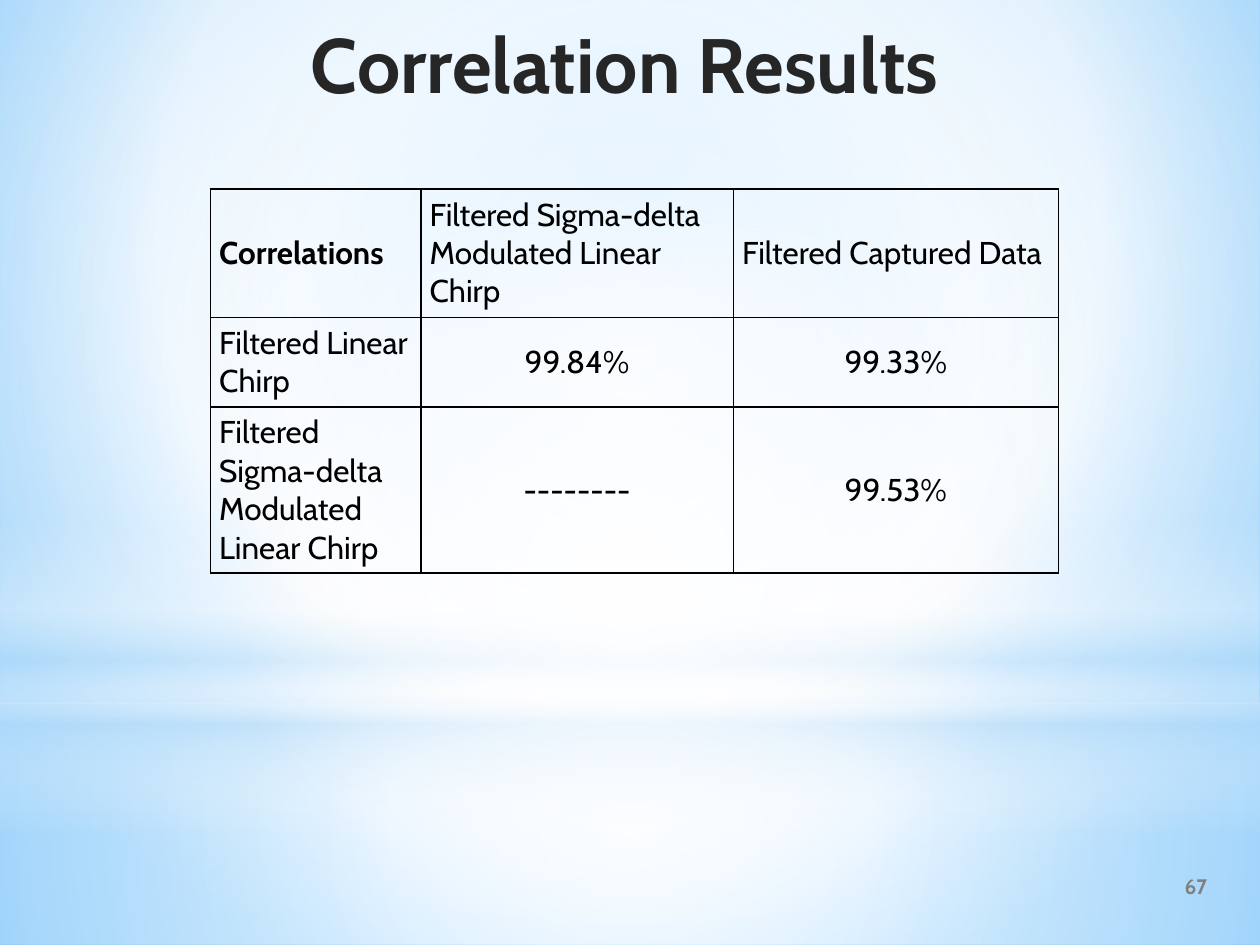
from lxml.etree import SubElement
from pptx import Presentation
from pptx.dml.color import RGBColor
from pptx.enum.shapes import MSO_SHAPE
from pptx.enum.text import MSO_ANCHOR, PP_ALIGN
from pptx.oxml.ns import qn
from pptx.util import Inches, Pt

FONT = "Cabin"
BLACK = RGBColor(0x00, 0x00, 0x00)
CHARCOAL = RGBColor(0x26, 0x26, 0x26)
GRAY = RGBColor(0x80, 0x80, 0x80)
WHITE = RGBColor(0xFF, 0xFF, 0xFF)
PALE_BLUE = RGBColor(0xB4, 0xDC, 0xFA)
SKY_BLUE = RGBColor(0x9E, 0xD5, 0xFF)
DEEP_BLUE = RGBColor(0x5B, 0xB9, 0xFF)

CENTER = (50, 50, 50, 50)
# Backdrop layers: preset, (left, top, width, height),
# stops of (position %, colour, opacity %), focus of a radial gradient or None
LAYERS = [
    (MSO_SHAPE.RECTANGLE, (0, 5.58, 10, 1.92),
     [(0, WHITE, 91), (37, WHITE, 76), (100, PALE_BLUE, 79)], CENTER),
    (MSO_SHAPE.RECTANGLE, (0, 0, 10, 5.58),
     [(0, WHITE, 89), (48, WHITE, 62), (100, PALE_BLUE, 79)], CENTER),
    (MSO_SHAPE.RECTANGLE, (0, 4.12, 10, 2.5),
     [(0, WHITE, 0), (29, WHITE, 30), (45, PALE_BLUE, 40),
      (55, WHITE, 26), (65, PALE_BLUE, 60), (100, WHITE, 0)], None),
    (MSO_SHAPE.OVAL, (0, 1.75, 10, 5.58),
     [(0, WHITE, 100), (56, WHITE, 0)], CENTER),
]

COLUMN_WIDTHS = [1.67, 2.48, 2.58]
ROW_HEIGHTS = [1.02, 0.71, 1.32]
CORRELATIONS = [
    ["Correlations", "Filtered Sigma-delta Modulated Linear Chirp",
     "Filtered Captured Data"],
    ["Filtered Linear Chirp", "99.84%", "99.33%"],
    ["Filtered Sigma-delta Modulated Linear Chirp", "--------", "99.53%"],
]


def set_gradient(parent, fill, stops, focus):
    """Give the parent a gradient, radial around focus or else vertical."""
    fill.solid()
    solid = parent.find(qn("a:solidFill"))
    gradient = SubElement(parent, qn("a:gradFill"), rotWithShape="1")
    parent.replace(solid, gradient)
    stop_list = SubElement(gradient, qn("a:gsLst"))
    for position, color, opacity in stops:
        stop = SubElement(stop_list, qn("a:gs"), pos=str(position * 1000))
        tint = SubElement(stop, qn("a:srgbClr"), val=str(color))
        if opacity < 100:
            SubElement(tint, qn("a:alpha"), val=str(opacity * 1000))
    if focus:
        radial = SubElement(gradient, qn("a:path"), path="circle")
        edges = {side: str(share * 1000) for side, share in zip("ltrb", focus)}
        SubElement(radial, qn("a:fillToRect"), **edges)
    else:
        SubElement(gradient, qn("a:lin"), ang="5400000", scaled="0")


def add_backdrop(slide):
    fill = slide.background.fill
    fill.solid()
    background = next(slide.element.iter(qn("p:bgPr")))
    set_gradient(background, fill,
                 [(0, SKY_BLUE, 100), (60, WHITE, 100), (100, DEEP_BLUE, 100)],
                 (20, 10, 20, 60))
    for preset, box, stops, focus in LAYERS:
        layer = slide.shapes.add_shape(preset, *map(Inches, box))
        layer.shadow.inherit = False
        layer.line.fill.background()
        set_gradient(layer.element.spPr, layer.fill, stops, focus)


def write_text(frame, text, size=18, color=BLACK, bold=False,
               align=PP_ALIGN.LEFT):
    frame.word_wrap = True
    paragraph = frame.paragraphs[0]
    paragraph.alignment = align
    run = paragraph.add_run()
    run.text = text
    run.font.name = FONT
    run.font.size = Pt(size)
    run.font.bold = bold
    run.font.color.rgb = color


def add_label(slide, box, text, **text_format):
    frame = slide.shapes.add_textbox(*map(Inches, box)).text_frame
    frame.vertical_anchor = MSO_ANCHOR.MIDDLE
    write_text(frame, text, **text_format)


def style_cell(cell):
    cell.vertical_anchor = MSO_ANCHOR.MIDDLE
    cell.margin_left = cell.margin_right = Inches(0.07)
    cell.margin_top = cell.margin_bottom = Inches(0.05)
    # Borders come before the fill in the cell properties
    properties = cell._tc.get_or_add_tcPr()
    for side in ("lnL", "lnR", "lnT", "lnB"):
        border = SubElement(properties, qn(f"a:{side}"), w=str(Pt(1)))
        ink = SubElement(border, qn("a:solidFill"))
        SubElement(ink, qn("a:srgbClr"), val=str(BLACK))
    cell.fill.background()


def add_correlation_table(slide):
    table = slide.shapes.add_table(
        len(ROW_HEIGHTS), len(COLUMN_WIDTHS), Inches(1.67), Inches(1.5),
        Inches(sum(COLUMN_WIDTHS)), Inches(sum(ROW_HEIGHTS))).table
    table.first_row = table.horz_banding = False
    for column, width in zip(table.columns, COLUMN_WIDTHS):
        column.width = Inches(width)
    for row, height in zip(table.rows, ROW_HEIGHTS):
        row.height = Inches(height)
    for r, texts in enumerate(CORRELATIONS):
        for c, text in enumerate(texts):
            cell = table.cell(r, c)
            style_cell(cell)
            is_value = r > 0 and c > 0
            write_text(cell.text_frame, text, bold=r == c == 0,
                       align=PP_ALIGN.CENTER if is_value else PP_ALIGN.LEFT)


def main():
    presentation = Presentation()
    presentation.slide_width = Inches(10)
    presentation.slide_height = Inches(7.5)
    slide = presentation.slides.add_slide(presentation.slide_layouts[6])

    add_backdrop(slide)
    # Title
    add_label(slide, (0.5, 0.08, 8.92, 0.83), "Correlation Results",
              size=44, color=CHARCOAL, bold=True, align=PP_ALIGN.CENTER)
    add_correlation_table(slide)
    # Page number
    add_label(slide, (7.68, 6.83, 2, 0.4), "67",
              size=12, color=GRAY, bold=True, align=PP_ALIGN.RIGHT)

    presentation.save("out.pptx")


if __name__ == "__main__":
    main()
